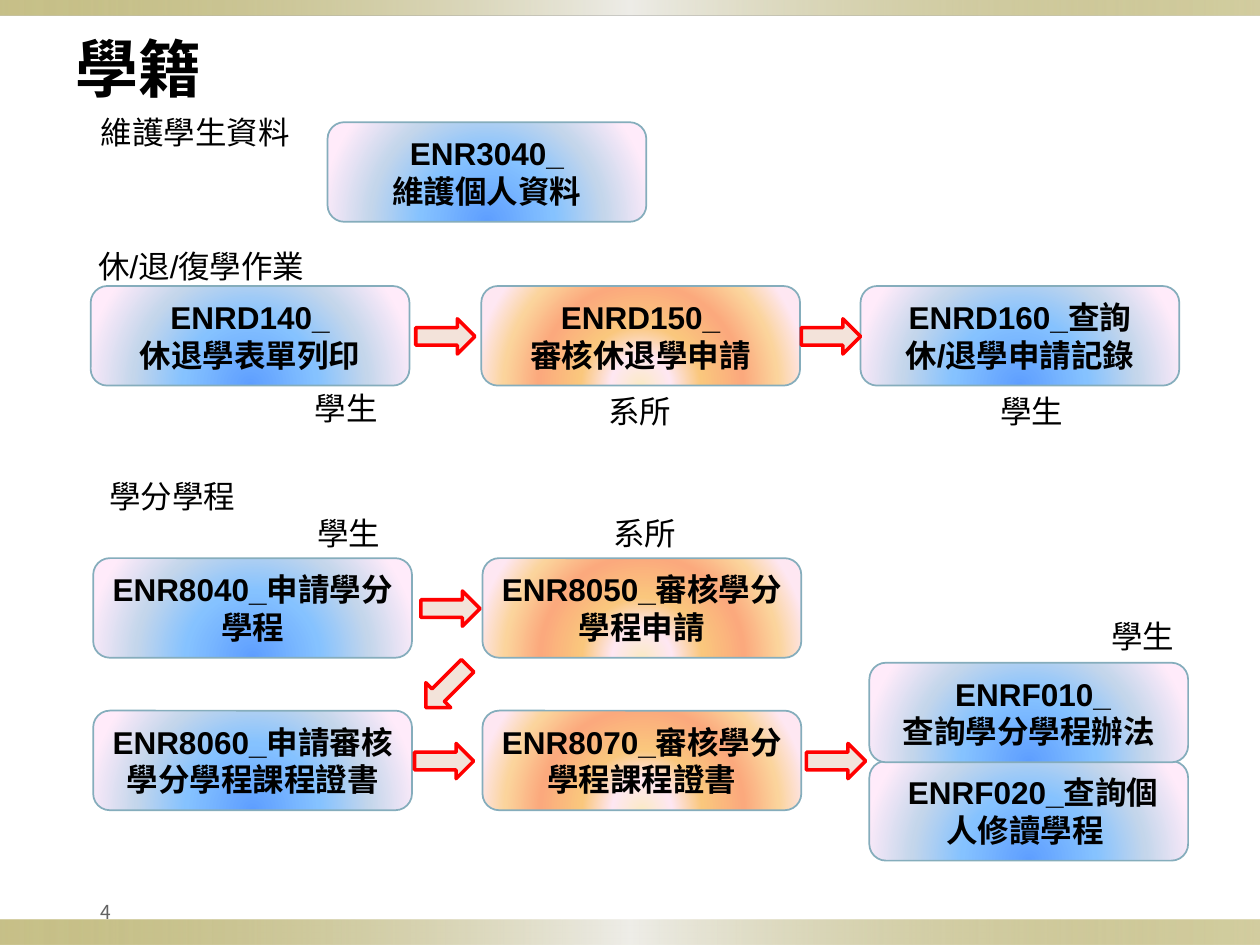
from lxml.etree import SubElement
from pptx import Presentation
from pptx.dml.color import RGBColor
from pptx.enum.shapes import MSO_SHAPE
from pptx.enum.text import MSO_ANCHOR, PP_ALIGN
from pptx.oxml.ns import qn
from pptx.util import Emu, Pt

PX = 9144  # 100 px to the inch
COLORS = {"text": "000000", "number": "636363", "box line": "85ADBC",
          "arrow": "F3E3DA", "arrow line": "FF0000"}
# Gradient stops: position, colour, opacity, all but colour in percent
BAR = [(0, "918415", 50), (50, "EEEDE8", 100), (100, "918415", 40)]
STUDENT = [(0, "5E9EFF", 100), (40, "85C2FF", 100), (70, "C4D6EB", 100),
           (100, "FFEBFA", 100)]
OFFICE = [(0, "FBEAC7", 100), (18, "FEE7F2", 100), (36, "FAC77D", 100),
          (61, "FBA97D", 100), (82, "FBD49C", 100), (100, "FEE7F2", 100)]
CJK = "Noto Sans CJK SC"
BOX_W, BOX_H = 253, 79
ARROW_W, ARROW_H = 47, 28


def px(*lengths):
    return [Emu(length * PX) for length in lengths]


def color(name):
    return RGBColor.from_string(COLORS[name])


def set_text(frame, text, size=18, bold=False, align=PP_ALIGN.LEFT,
             font="Arial", ink="text"):
    frame.text = text
    for para in frame.paragraphs:
        para.alignment = align
        for span in para.runs:
            span.font.size, span.font.bold, span.font.name = Pt(size), bold, font
            span.font.color.rgb = color(ink)
            SubElement(span.font._element, qn("a:ea"), typeface=CJK)


def set_gradient(shape, stops, radial):
    shape.fill.gradient()
    fill = shape._element.spPr.find(qn("a:gradFill"))
    for child in list(fill):
        fill.remove(child)
    stop_list = SubElement(fill, qn("a:gsLst"))
    for position, value, opacity in stops:
        stop = SubElement(stop_list, qn("a:gs"), pos=str(position * 1000))
        tint = SubElement(stop, qn("a:srgbClr"), val=value)
        if opacity < 100:
            SubElement(tint, qn("a:alpha"), val=str(opacity * 1000))
    if radial:  # spreads from the middle of the bottom edge
        circle = SubElement(fill, qn("a:path"), path="circle")
        SubElement(circle, qn("a:fillToRect"), l="50000", t="100000", r="50000", b="0")
    else:
        SubElement(fill, qn("a:lin"), ang="0", scaled="1")


def add_bar(page, top, height):
    bar = page.shapes.add_shape(MSO_SHAPE.RECTANGLE, *px(0, top, 1000, height))
    bar.shadow.inherit = False
    bar.line.fill.background()
    set_gradient(bar, BAR, radial=False)


def add_step(page, left, top, text, stops):
    box = page.shapes.add_shape(MSO_SHAPE.ROUNDED_RECTANGLE, *px(left, top, BOX_W, BOX_H))
    box.shadow.inherit = False
    set_gradient(box, stops, radial=True)
    box.line.color.rgb, box.line.width = color("box line"), Pt(1)
    box.text_frame.vertical_anchor = MSO_ANCHOR.MIDDLE
    set_text(box.text_frame, text, bold=True, align=PP_ALIGN.CENTER)


def add_arrow(page, left, top, angle=0):
    arrow = page.shapes.add_shape(MSO_SHAPE.RIGHT_ARROW, *px(left, top, ARROW_W, ARROW_H))
    arrow.shadow.inherit = False
    arrow.rotation = angle
    arrow.fill.solid()
    arrow.fill.fore_color.rgb = color("arrow")
    arrow.line.color.rgb, arrow.line.width = color("arrow line"), Pt(2)


def add_label(page, left, top, width, text, wrap=False):
    label = page.shapes.add_textbox(*px(left, top, width, 40))
    label.text_frame.word_wrap = wrap
    set_text(label.text_frame, text)


def add_frame(page):
    # Bars, page number and title
    add_bar(page, 730, 20)
    add_bar(page, 0, 12)
    number = page.shapes.add_textbox(*px(0, 704, 93, 40)).text_frame
    number.word_wrap = True
    number.margin_left = number.margin_right = Emu(5 * PX)
    number.margin_top = number.margin_bottom = Emu(5 * PX)
    number.vertical_anchor = MSO_ANCHOR.MIDDLE
    set_text(number, "4", 11, align=PP_ALIGN.RIGHT, font=CJK, ink="number")
    title = page.shapes.title
    title.left, title.top, title.width, title.height = px(50, 5, 900, 97)
    title.text_frame.vertical_anchor = MSO_ANCHOR.MIDDLE
    set_text(title.text_frame, "學籍", 36, bold=True, font=CJK)


def add_personal_data(page, left, top):
    add_label(page, left, top, 172, "維護學生資料")
    add_step(page, left + 190, top + 12, "ENR3040_\n維護個人資料", STUDENT)


def add_leave(page, left, top):
    # Heading, three steps in a row, and who does each
    add_label(page, left - 4, top - 36, 200, "休/退/復學作業", wrap=True)
    steps = [(0, "ENRD140_\n休退學表單列印", STUDENT, 168, 77, "學生"),
             (310, "ENRD150_\n審核休退學申請", OFFICE, 401, 79, "系所"),
             (611, "ENRD160_查詢休/退學申請記錄", STUDENT, 712, 79, "學生")]
    for x, text, stops, role_x, role_y, role in steps:
        add_step(page, left + x, top, text, stops)
        add_label(page, left + role_x, top + role_y, 71, role)
    for x in (258, 564):
        add_arrow(page, left + x, top + 26)


def add_program(page, left, top):
    # Heading and roles
    add_label(page, left + 3, top - 69, 121, "學分學程")
    for x, y, role in [(168, -40, "學生"), (403, -40, "系所"), (798, 42, "學生")]:
        add_label(page, left + x, top + y, 71, role)
    # Two rows of application and review, then two queries
    steps = [(0, 0, "ENR8040_申請學分學程", STUDENT),
             (309, 0, "ENR8050_審核學分學程申請", OFFICE),
             (0, 121, "ENR8060_申請審核學分學程課程證書", STUDENT),
             (309, 121, "ENR8070_審核學分學程課程證書", OFFICE),
             (616, 161, " ENRF020_查詢個人修讀學程 ", STUDENT),
             (616, 83, " ENRF010_\n查詢學分學程辦法", STUDENT)]
    for x, y, text, stops in steps:
        add_step(page, left + x, top + y, text, stops)
    for x, y, angle in [(260, 26, 0), (257, 88, 135), (255, 147, 0), (566, 147, 0)]:
        add_arrow(page, left + x, top + y, angle)


def main():
    deck = Presentation()
    deck.slide_width, deck.slide_height = px(1000, 750)
    page = deck.slides.add_slide(deck.slide_layouts[5])
    add_frame(page)
    add_personal_data(page, 70, 85)
    add_leave(page, 72, 227)
    add_program(page, 74, 443)
    deck.save("out.pptx")


if __name__ == "__main__":
    main()
